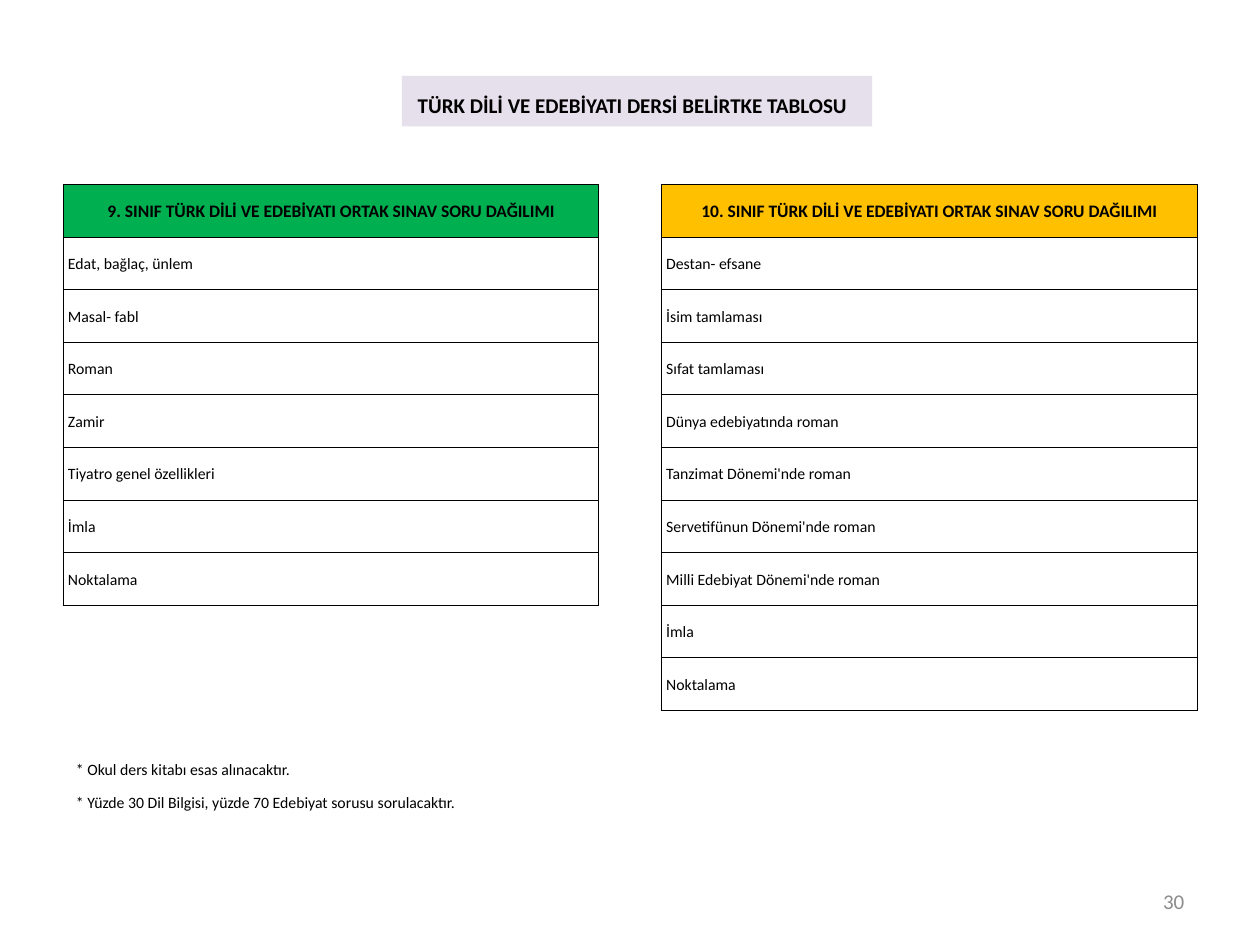
from dataclasses import dataclass

from lxml.etree import SubElement
from pptx import Presentation
from pptx.dml.color import RGBColor
from pptx.enum.shapes import PP_PLACEHOLDER as Holder
from pptx.enum.text import MSO_ANCHOR as Anchor, MSO_AUTO_SIZE as AutoSize, PP_ALIGN as Align
from pptx.oxml.ns import qn
from pptx.util import Cm, Pt


@dataclass(frozen=True)
class Theme:
    """Colours, fonts and type sizes of the slide."""
    ink: str = "000000"
    paper: str = "FFFFFF"
    muted: str = "8C8C8C"
    banner: str = "E6E0EC"
    grade9: str = "00B050"
    grade10: str = "FFC000"
    font: str = "Calibri"
    spacer_font: str = "Arial"
    title: int = 12
    spacer: int = 18
    heading: int = 10
    body: int = 9
    number: int = 12
    border: float = 0.5


THEME = Theme()
ROW = 1.06
GRADE9_TOPICS = [
    "Edat, bağlaç, ünlem", "Masal- fabl", "Roman", "Zamir",
    "Tiyatro genel özellikleri", "İmla", "Noktalama",
]
GRADE10_TOPICS = [
    "Destan- efsane", "İsim tamlaması", "Sıfat tamlaması",
    "Dünya edebiyatında roman", "Tanzimat Dönemi'nde roman",
    "Servetifünun Dönemi'nde roman", "Milli Edebiyat Dönemi'nde roman",
    "İmla", "Noktalama",
]
NOTES = [
    "* Okul ders kitabı esas alınacaktır.",
    "* Yüzde 30 Dil Bilgisi, yüzde 70 Edebiyat sorusu sorulacaktır.",
]


def apply(target, formats):
    """Set every attribute named in formats on target."""
    for name, value in formats.items():
        setattr(target, name, value)


def write(paragraph, text, size, color=THEME.ink, bold=False, align=Align.LEFT, font=THEME.font):
    """Add one formatted run to a paragraph."""
    paragraph.alignment = align
    run = paragraph.add_run()
    run.text = text
    apply(run.font, {"size": Pt(size), "name": font, "bold": bold})
    run.font.color.rgb = RGBColor.from_string(color)


def draw_borders(cell, sides):
    """Draw the given sides of a cell and clear the others."""
    properties = cell._tc.get_or_add_tcPr()
    for side in "LRTB":
        line = SubElement(properties, qn(f"a:ln{side}"), w=str(Pt(THEME.border)))
        if side in sides:
            fill = SubElement(line, qn("a:solidFill"))
            SubElement(fill, qn("a:srgbClr"), val=THEME.ink)
        else:
            SubElement(line, qn("a:noFill"))


def format_cell(cell, fill, sides, indent):
    """Give a cell its borders, fill, margins and anchor."""
    draw_borders(cell, sides)
    cell.fill.solid()
    cell.fill.fore_color.rgb = RGBColor.from_string(fill)
    apply(cell, {
        "margin_left": Cm(indent), "margin_right": Cm(0.03), "margin_top": Cm(0.03),
        "margin_bottom": 0, "vertical_anchor": Anchor.MIDDLE,
    })


def add_grid(slide, box, columns, rows):
    """Add an unstyled table with the given column widths and row heights."""
    left, top = box
    grid = slide.shapes.add_table(
        len(rows), len(columns), Cm(left), Cm(top), Cm(sum(columns)), Cm(sum(rows))).table
    apply(grid, {"first_row": False, "horz_banding": False})
    for column, width in zip(grid.columns, columns):
        column.width = Cm(width)
    for row, height in zip(grid.rows, rows):
        row.height = Cm(height)
    return grid


def add_topics(slide, box, columns, heading, color, topics, split_rows=0):
    """Place a grade's topic table, leaving the last split_rows unmerged."""
    count = len(topics) + 1
    last = len(columns) - 1
    grid = add_grid(slide, box, columns, [ROW] * count)
    for index, text in enumerate([heading, *topics]):
        is_heading = index == 0
        is_split = index >= count - split_rows
        for position in range(last + 1):
            sides = "TB" + "L" * (position == 0 or not is_split) + "R" * (position == last or not is_split)
            format_cell(grid.cell(index, position), color if is_heading else THEME.paper,
                        sides, 0.03 if is_heading else 0.1)
        topic = grid.cell(index, 0)
        if last and not is_split:
            topic.merge(grid.cell(index, last))
        write(topic.text_frame.paragraphs[0], text,
              THEME.heading if is_heading else THEME.body, bold=is_heading,
              align=Align.CENTER if is_heading else Align.LEFT)


def add_notes(slide, box):
    """Place the borderless notes below the topic tables."""
    grid = add_grid(slide, box, [10.39], [0.81, 0.53])
    for index, note in enumerate(NOTES):
        cell = grid.cell(index, 0)
        format_cell(cell, THEME.paper, "", 0.03)
        write(cell.text_frame.paragraphs[0], note, THEME.body)


def place(holder, box):
    """Move and size a placeholder to a box in centimetres."""
    apply(holder, dict(zip(("left", "top", "width", "height"), map(Cm, box))))


def add_title(slide, box):
    """Place the title on its tinted banner."""
    title = slide.shapes.title
    place(title, box)
    title.fill.solid()
    title.fill.fore_color.rgb = RGBColor.from_string(THEME.banner)
    apply(title.text_frame, {
        "word_wrap": False, "auto_size": AutoSize.NONE, "vertical_anchor": Anchor.MIDDLE})
    line = title.text_frame.paragraphs[0]
    write(line, "TÜRK DİLİ VE EDEBİYATI DERSİ BELİRTKE TABLOSU", THEME.title,
          bold=True, align=Align.CENTER)
    write(line, " ", THEME.spacer, align=Align.CENTER, font=THEME.spacer_font)


def add_number(slide, box):
    """Place the page number in the layout's number placeholder."""
    source = next(holder for holder in slide.slide_layout.placeholders
                  if holder.placeholder_format.type == Holder.SLIDE_NUMBER)
    slide.shapes.clone_placeholder(source)
    number = slide.placeholders[source.placeholder_format.idx]
    place(number, box)
    number.text_frame.vertical_anchor = Anchor.MIDDLE
    write(number.text_frame.paragraphs[0], "30", THEME.number, THEME.muted, align=Align.RIGHT)


def main():
    """Build and save the slide."""
    deck = Presentation()
    apply(deck, {"slide_width": Cm(25.4), "slide_height": Cm(19.05)})
    slide = deck.slides.add_slide(deck.slide_layouts.get_by_name("Title Only"))
    add_number(slide, (18.2, 17.66, 5.93, 1.01))
    add_topics(slide, (13.33, 3.72), [2.31, 8.49],
               "10. SINIF TÜRK DİLİ VE EDEBİYATI ORTAK SINAV SORU DAĞILIMI",
               THEME.grade10, GRADE10_TOPICS, split_rows=2)
    add_topics(slide, (1.27, 3.72), [10.8],
               "9. SINIF TÜRK DİLİ VE EDEBİYATI ORTAK SINAV SORU DAĞILIMI",
               THEME.grade9, GRADE9_TOPICS)
    add_title(slide, (8.1, 1.53, 9.48, 1.02))
    add_notes(slide, (1.5, 15.11))
    deck.save("out.pptx")


if __name__ == "__main__":
    main()
